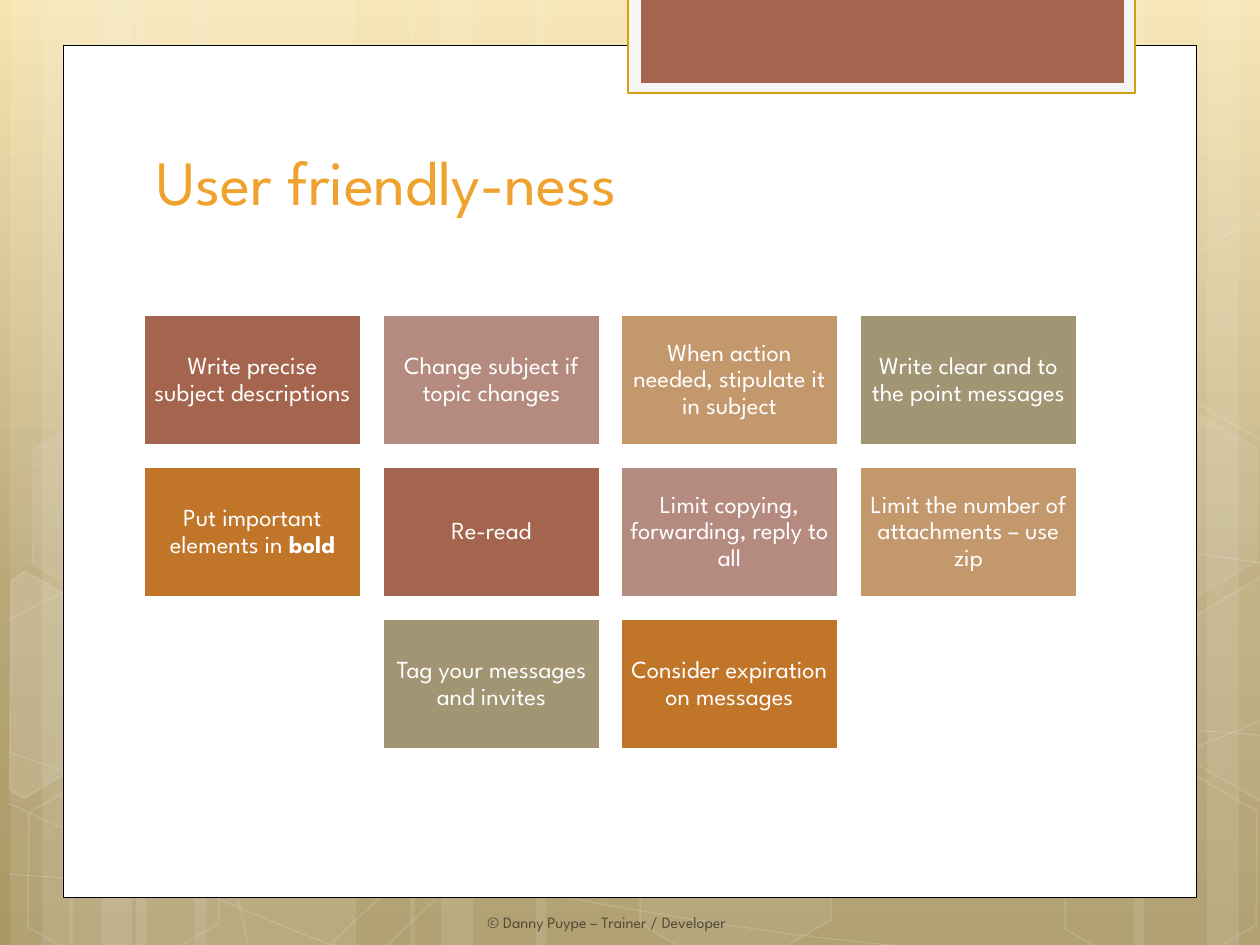
from copy import deepcopy
from itertools import cycle
from math import cos, radians, sin

from lxml.etree import SubElement
from pptx import Presentation
from pptx.dml.color import RGBColor
from pptx.enum.shapes import MSO_SHAPE
from pptx.enum.text import MSO_ANCHOR, PP_ALIGN
from pptx.oxml.ns import qn
from pptx.util import Emu, Pt

SCALE = 914400 / 126
FONT = "League Spartan"
WHITE = RGBColor(0xFF, 0xFF, 0xFF)
BLACK = RGBColor(0x00, 0x00, 0x00)
OFF_WHITE = RGBColor(0xF5, 0xF5, 0xF5)
GOLD = RGBColor(0xD2, 0xA0, 0x10)
AMBER = RGBColor(0xF0, 0xA2, 0x2E)
UMBER = RGBColor(0x53, 0x4B, 0x38)
BRICK = RGBColor(0xA5, 0x64, 0x4E)
ROSE = RGBColor(0xB5, 0x8B, 0x80)
TAN = RGBColor(0xC3, 0x98, 0x6D)
OLIVE = RGBColor(0xA1, 0x95, 0x74)
ORANGE = RGBColor(0xC1, 0x75, 0x29)
SKY = [
    (0, RGBColor(0xF6, 0xE4, 0xB0)),
    (0.62, RGBColor(0xBA, 0xA8, 0x78)),
    (1, RGBColor(0xA9, 0x97, 0x64)),
]


def px(*lengths):
    return [Emu(round(length * SCALE)) for length in lengths]


def make_veil(shape, fill_alpha, line_alpha, line_width=1):
    shape.shadow.inherit = False
    for fill, alpha in ((shape.fill, fill_alpha), (shape.line.fill, line_alpha)):
        if alpha:
            fill.solid()
            fill.fore_color.rgb = WHITE
        else:
            fill.background()
    if line_alpha:
        shape.line.width = Pt(line_width)
    alphas = [alpha for alpha in (fill_alpha, line_alpha) if alpha]
    for color, alpha in zip(shape.element.xpath("./p:spPr//a:srgbClr"), alphas):
        SubElement(color, qn("a:alpha"), val=str(alpha * 1000))


presentation = Presentation()
presentation.slide_width, presentation.slide_height = px(1260, 945)
slide = presentation.slides.add_slide(presentation.slide_layouts[6])
shapes = slide.shapes

sky = slide.background.fill
sky.gradient()
sky.gradient_angle = 270
stop_list = slide.element.xpath(".//a:gsLst")[0]
stop_list.insert(1, deepcopy(stop_list[0]))
for stop, (position, color) in zip(sky.gradient_stops, SKY):
    stop.position = position
    stop.color.rgb = color

bands = [
    (136, 220), (10, 63), (42, 105), (195, 220), (69, 63), (101, 105),
    (924, 220), (1207, 63), (1134, 105), (536, 388), (410, 63), (441, 105),
]
for left, width in bands:
    band = shapes.add_shape(MSO_SHAPE.RECTANGLE, *px(left, 0, width, 975))
    make_veil(band, 10, None)

waves = [
    [(9, 874), (77, 879), (145, 883), (239, 882), (334, 879), (451, 878), (577, 864),
     (703, 852), (882, 827), (998, 803), (1113, 777), (1231, 738), (1269, 716)],
    [(9, 620), (45, 600), (82, 580), (152, 561), (224, 542), (326, 513), (437, 503),
     (549, 494), (685, 493), (824, 503), (963, 514), (1193, 554), (1269, 564)],
    [(8, 803), (160, 873), (311, 945), (421, 974)],
    [(9, 752), (48, 766), (88, 780), (161, 800), (234, 822), (344, 853), (450, 874),
     (554, 897), (687, 920), (791, 934), (896, 948), (1008, 954), (1075, 958),
     (1140, 961), (1158, 960), (1191, 959), (1223, 959), (1246, 956), (1269, 954)],
    [(305, 974), (328, 949), (350, 922), (381, 898), (411, 874), (454, 849), (489, 832),
     (524, 813), (546, 805), (592, 793), (638, 779), (722, 760), (766, 752),
     (811, 743), (818, 743), (857, 740), (896, 736), (958, 733), (1000, 731),
     (1045, 730), (1116, 731), (1116, 731), (1144, 731), (1173, 731), (1201, 731),
     (1223, 732), (1244, 733), (1256, 735), (1268, 736), (1264, 736), (1268, 736)],
]
for knots in waves:
    outline = shapes.build_freeform(*knots[0], scale=SCALE)
    outline.add_line_segments(knots[1:], close=False)
    wave = outline.convert_to_shape()
    track = wave.element.xpath(".//a:path")[0]
    segments = track.findall(qn("a:lnTo"))
    for start in range(0, len(segments), 3):
        curve = SubElement(track, qn("a:cubicBezTo"))
        for segment in segments[start:start + 3]:
            curve.append(segment[0])
            track.remove(segment)
    make_veil(wave, None, 20, 0.5)

hexagons = [
    (421, 47, 30, 4, 8), (626, 766, 30, 6, 12), (14, 769, 30, None, 12),
    (18, 406, 30, 7, 8), (219, 770, 16.7, None, 12), (949, 590, 30, 10, 12),
    (1051, 771, 30, None, 12), (1051, 408, 30, 7, 8),
]
for left, top, angle, fill_alpha, line_alpha in hexagons:
    hexagon = shapes.add_shape(MSO_SHAPE.HEXAGON, *px(left, top, 220, 198))
    hexagon.adjustments[0] = 0.285
    hexagon.rotation = angle
    make_veil(hexagon, fill_alpha, line_alpha)

cut_hexagons = [
    ((45, 696), [(11, 581), (25, 571), (122, 627), (120, 740), (24, 798), (9, 790)], 10),
    ((1241, 676), [(1167, 633), (1264, 575), (1273, 581), (1270, 796), (1261, 801), (1164, 746)], 4),
    ((1241, 314), [(1167, 271), (1264, 213), (1274, 219), (1270, 435), (1261, 440), (1164, 384)], None),
]
turn_cos, turn_sin = cos(radians(30)), sin(radians(30))
for (center_x, center_y), corners, fill_alpha in cut_hexagons:
    upright = [
        (center_x + (x - center_x) * turn_cos + (y - center_y) * turn_sin,
         center_y - (x - center_x) * turn_sin + (y - center_y) * turn_cos)
        for x, y in corners
    ]
    outline = shapes.build_freeform(*upright[0], scale=SCALE)
    outline.add_line_segments(upright[1:], close=True)
    cut_hexagon = outline.convert_to_shape()
    cut_hexagon.rotation = 30
    make_veil(cut_hexagon, fill_alpha, 12)

panels = [
    ((63, 45, 1134, 853), WHITE, BLACK, 0.5),
    ((628, -3, 507, 96), OFF_WHITE, GOLD, 1.25),
    ((641, -3, 483, 86), BRICK, None, 0),
]
for box, color, border, border_width in panels:
    panel = shapes.add_shape(MSO_SHAPE.RECTANGLE, *px(*box))
    panel.shadow.inherit = False
    panel.fill.solid()
    panel.fill.fore_color.rgb = color
    if border:
        panel.line.color.rgb = border
        panel.line.width = Pt(border_width)
    else:
        panel.line.fill.background()

captions = [
    ("© Danny Puype – Trainer / Developer", (475, 907, 310, 32), 9, UMBER, MSO_ANCHOR.TOP, False),
    ("User friendly-ness", (144, 141, 968, 83), 36, AMBER, MSO_ANCHOR.BOTTOM, True),
]
for words, box, size, color, anchor, wrap in captions:
    frame = shapes.add_textbox(*px(*box)).text_frame
    frame.word_wrap = wrap
    frame.vertical_anchor = anchor
    run = frame.paragraphs[0].add_run()
    run.text = words
    run.font.name = FONT
    run.font.size = Pt(size)
    run.font.color.rgb = color

tip_rows = [
    (0, [["Write precise subject descriptions"], ["Change subject if topic changes"],
         ["When action needed, stipulate it in subject"],
         ["Write clear and to the point messages"]]),
    (0, [["Put important elements in ", "bold"], ["Re-read"],
         ["Limit copying, forwarding, reply to all"],
         ["Limit the number of attachments – use zip"]]),
    (1, [["Tag your messages and invites"], ["Consider expiration on messages"]]),
]
tip_colors = cycle([BRICK, ROSE, TAN, OLIVE, ORANGE])
for row, (first_column, tips) in enumerate(tip_rows):
    for column, parts in enumerate(tips, first_column):
        left = 144 + round(716 * column / 3)
        tip = shapes.add_shape(MSO_SHAPE.RECTANGLE, *px(left, 315 + 152 * row, 217, 130))
        tip.shadow.inherit = False
        tip.fill.solid()
        tip.fill.fore_color.rgb = next(tip_colors)
        tip.line.color.rgb = WHITE
        tip.line.width = Pt(1.25)
        frame = tip.text_frame
        frame.word_wrap = True
        frame.vertical_anchor = MSO_ANCHOR.MIDDLE
        frame.margin_left, frame.margin_top, frame.margin_right, frame.margin_bottom = px(7, 7, 7, 7)
        paragraph = frame.paragraphs[0]
        paragraph.alignment = PP_ALIGN.CENTER
        paragraph.line_spacing = 0.9
        for part in parts:
            run = paragraph.add_run()
            run.text = part
            run.font.name = FONT
            run.font.size = Pt(14)
            run.font.color.rgb = WHITE
            if part == "bold":
                run.font.bold = True

presentation.save("out.pptx")
